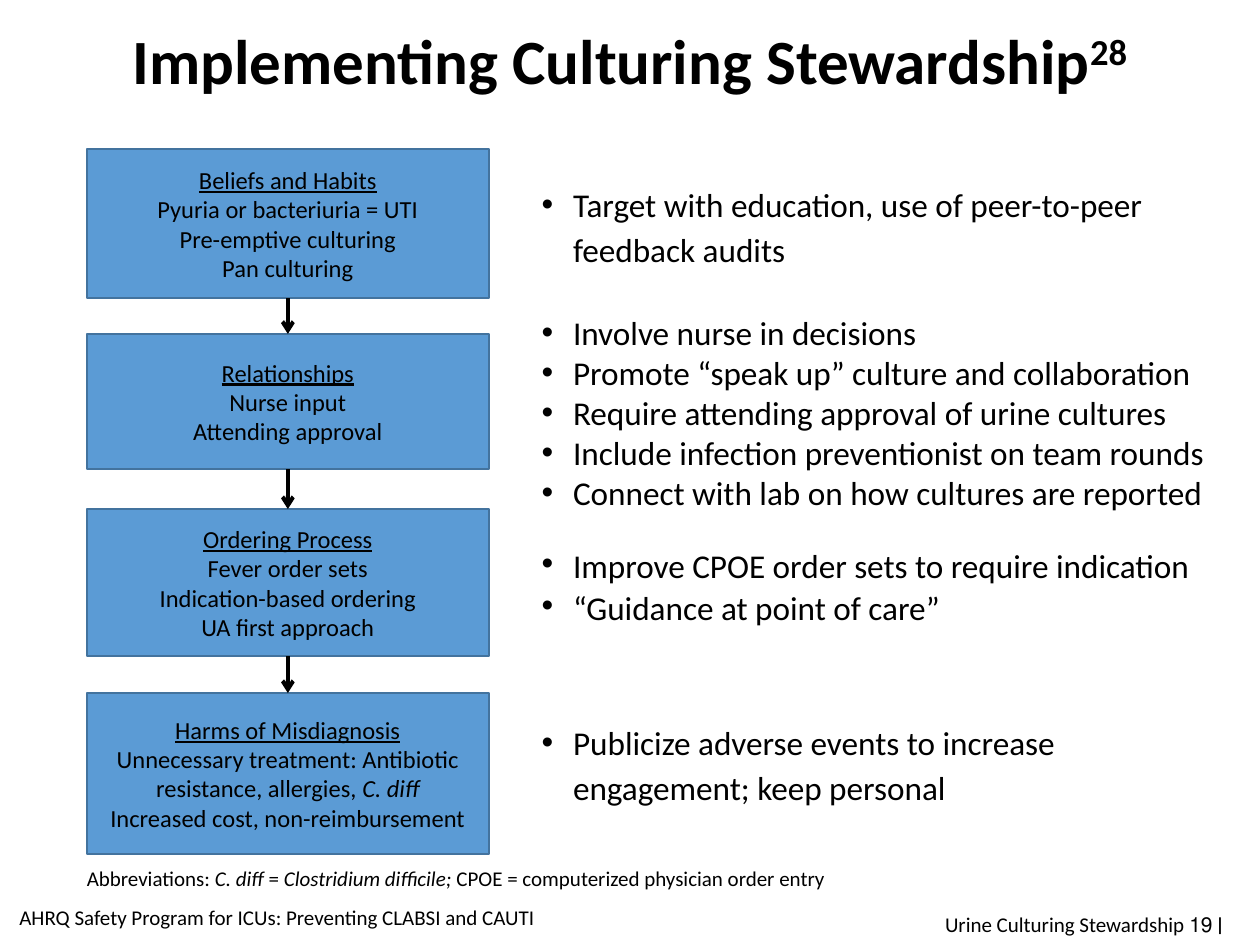
from dataclasses import dataclass

from lxml.etree import SubElement
from pptx import Presentation
from pptx.dml.color import RGBColor
from pptx.enum.shapes import MSO_CONNECTOR, MSO_SHAPE
from pptx.enum.text import MSO_ANCHOR, MSO_AUTO_SIZE, PP_ALIGN
from pptx.oxml.ns import qn
from pptx.util import Pt


@dataclass(frozen=True)
class Theme:
    font: str = "Calibri"
    mark_font: str = "Roboto"
    ink: RGBColor = RGBColor(0x00, 0x00, 0x00)
    fill: RGBColor = RGBColor(0x5B, 0x9B, 0xD5)
    edge: RGBColor = RGBColor(0x43, 0x73, 0x9E)
    title: int = 36
    bullet: int = 19
    step: int = 14
    note: int = 12


theme = Theme()


def write(box, lines, size, align=PP_ALIGN.LEFT, anchor=MSO_ANCHOR.MIDDLE):
    """Fill a shape with one paragraph per line; text between underscores is italic."""
    frame = box.text_frame
    frame.word_wrap = True
    frame.auto_size = MSO_AUTO_SIZE.NONE
    frame.vertical_anchor = anchor
    for index, line in enumerate(lines):
        para = frame.add_paragraph() if index else frame.paragraphs[0]
        para.alignment = align
        for part, words in enumerate(line.split("_")):
            if not words:
                continue
            span = para.add_run()
            span.text = words
            span.font.name = theme.font
            span.font.size = Pt(size)
            span.font.color.rgb = theme.ink
            span.font.italic = part % 2 == 1
    return frame.paragraphs


def add_text(left, top, width, height, lines, size, **layout):
    box = page.shapes.add_textbox(Pt(left), Pt(top), Pt(width), Pt(height))
    return write(box, lines, size, **layout)


deck = Presentation()
deck.slide_width, deck.slide_height = Pt(720), Pt(540)
page = deck.slides.add_slide(deck.slide_layouts[5])

# Title with its reference number
title = page.shapes.title
title.left, title.top, title.width, title.height = Pt(49.7), Pt(0.7), Pt(620.6), Pt(64)
heading = write(title, ["Implementing Culturing Stewardship"], theme.title, PP_ALIGN.CENTER)[0]
heading.line_spacing = 1.05
reference = heading.add_run()
reference.text = "28"
reference.font.name = theme.font
reference.font.size = Pt(theme.title)
reference.font.color.rgb = theme.ink
reference.font._element.set("baseline", "30000")
for span in heading.runs:
    span.font.bold = True

# Flow of steps on the left
step_left, step_width = 49.7, 229.6
steps = [
    (85.2, 85.2, ["Beliefs and Habits", "Pyuria or bacteriuria = UTI",
                  "Pre-emptive culturing", "Pan culturing"]),
    (190.8, 77.4, ["Relationships", "Nurse input", "Attending approval"]),
    (290.9, 84.2, ["Ordering Process", "Fever order sets",
                   "Indication-based ordering", "UA first approach"]),
    (396, 92, ["Harms of Misdiagnosis",
               "Unnecessary treatment: Antibiotic resistance, allergies, _C. diff_",
               "Increased cost, non-reimbursement"]),
]
for top, height, lines in steps:
    step = page.shapes.add_shape(
        MSO_SHAPE.RECTANGLE, Pt(step_left), Pt(top), Pt(step_width), Pt(height))
    step.shadow.inherit = False
    step.fill.solid()
    step.fill.fore_color.rgb = theme.fill
    step.line.color.rgb = theme.edge
    step.line.width = Pt(1)
    paragraphs = write(step, lines, theme.step, PP_ALIGN.CENTER)
    paragraphs[0].runs[0].font.underline = True

# Arrows from each step to the next
middle = Pt(step_left + step_width / 2)
for (top, height, _), (next_top, _, _) in zip(steps, steps[1:]):
    arrow = page.shapes.add_connector(
        MSO_CONNECTOR.STRAIGHT, middle, Pt(top + height), middle, Pt(next_top))
    arrow.line.color.rgb = theme.ink
    arrow.line.width = Pt(2.25)
    SubElement(arrow.line._get_or_add_ln(), qn("a:tailEnd"), type="arrow")
    SubElement(arrow._element.spPr, qn("a:effectLst"))

# Actions on the right: top, width, height, line spacing, space between, lines
actions = [
    (90, 360, 75.6, 1.14, 0,
     ["Target with education, use of peer-to-peer feedback audits"]),
    (187.2, 417.6, 96.5, 1, 0,
     ["Involve nurse in decisions",
      "Promote “speak up” culture and collaboration",
      "Require attending approval of urine cultures",
      "Include infection preventionist on team rounds",
      "Connect with lab on how cultures are reported"]),
    (305.3, 391.7, 66.2, 0.6, 10,
     ["Improve CPOE order sets to require indication", "“Guidance at point of care”"]),
    (390.2, 360, 90.7, 1.14, 0,
     ["Publicize adverse events to increase engagement; keep personal"]),
]
for top, width, height, spacing, gap, lines in actions:
    for index, para in enumerate(add_text(302.4, top, width, height, lines, theme.bullet)):
        properties = para._p.get_or_add_pPr()
        properties.set("marL", str(Pt(18)))
        properties.set("indent", str(Pt(-18)))
        SubElement(properties, qn("a:buFont"), typeface="Arial")
        SubElement(properties, qn("a:buChar"), char="•")
        para.line_spacing = spacing
        para.space_before = Pt(gap if index else 0)

# Abbreviations and footers
add_text(42.5, 491, 447.8, 21.6,
         ["Abbreviations: _C. diff_ = _Clostridium difficile; _"
          "CPOE = computerized physician order entry"],
         theme.note, anchor=MSO_ANCHOR.TOP)
add_text(0, 509.8, 316.8, 28.8,
         ["AHRQ Safety Program for ICUs: Preventing CLABSI and CAUTI"],
         theme.note, align=PP_ALIGN.CENTER)
footer = add_text(531.4, 516.2, 174.2, 28.8 - 5, ["Urine Culturing Stewardship "],
                  theme.note, align=PP_ALIGN.RIGHT)[0]
for words, font in (("׀ ", theme.mark_font), ("19", theme.font)):
    span = footer.add_run()
    span.text = words
    span.font.name = font
    span.font.size = Pt(theme.note)
    span.font.color.rgb = theme.ink

deck.save("out.pptx")
